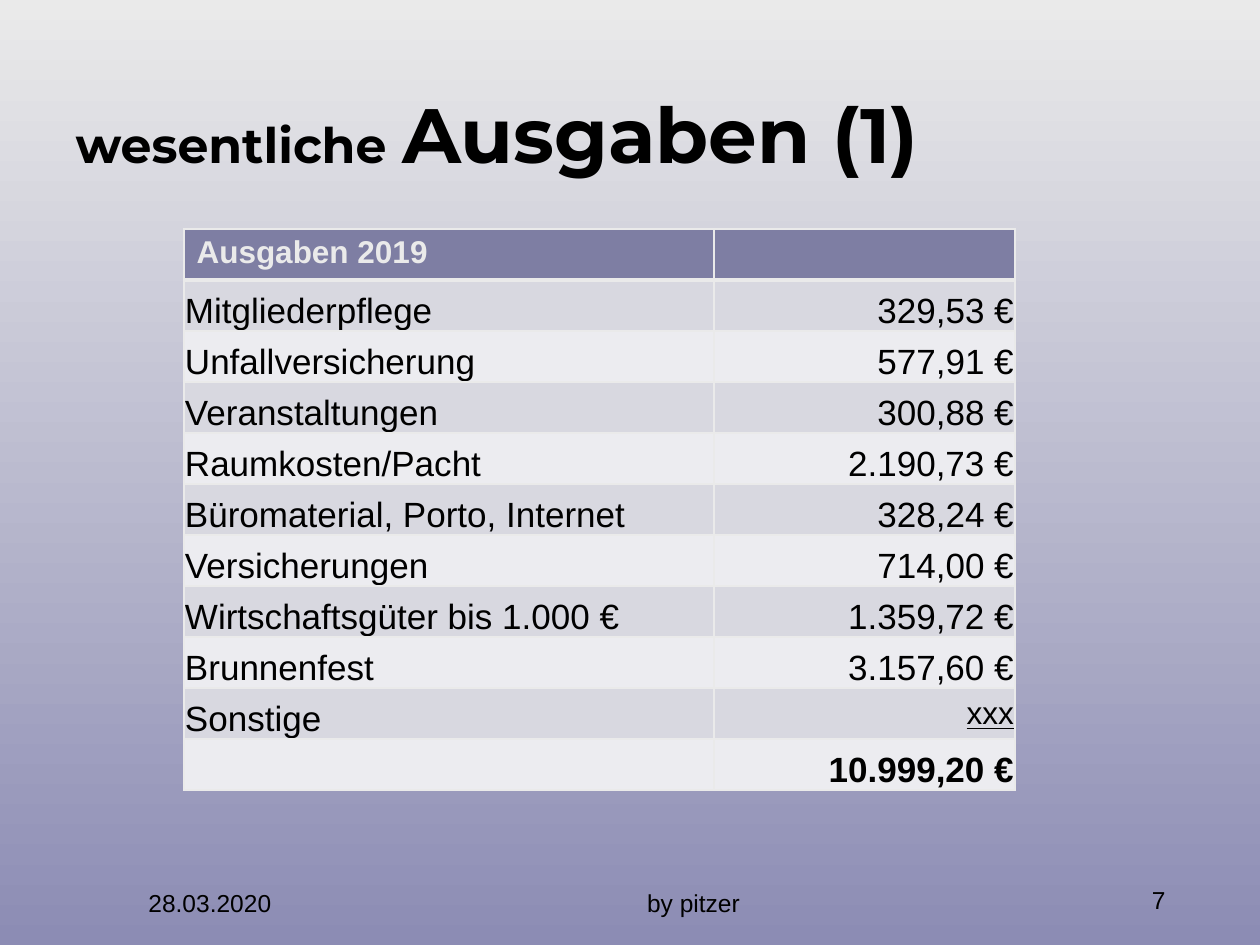
from typing import NamedTuple

import lxml.etree
import pptx
import pptx.dml.color
import pptx.enum.text
import pptx.oxml.ns
import pptx.util

RGBColor = pptx.dml.color.RGBColor
ALIGN = pptx.enum.text.PP_ALIGN
ANCHOR = pptx.enum.text.MSO_ANCHOR
qn = pptx.oxml.ns.qn

BLACK = RGBColor(0x00, 0x00, 0x00)
LIGHT = RGBColor(0xEA, 0xEA, 0xEA)
BG_BOTTOM = RGBColor(0x8C, 0x8C, 0xB4)
HEADER_FILL = RGBColor(0x7E, 0x7E, 0xA3)
BAND_FILLS = (RGBColor(0xD8, 0xD8, 0xE0), RGBColor(0xEC, 0xEC, 0xF0))

PX = 914400 // 126
COL_WIDTHS = (530, 301)
ROW_HEIGHT = 51


class Footer(NamedTuple):
    text: str
    left: int
    top: int
    width: int
    align: ALIGN


class Expense(NamedTuple):
    label: str
    amount: str
    size: int = 20
    anchor: ANCHOR = ANCHOR.BOTTOM
    bold: bool = False
    underline: bool = False


FOOTERS = (
    Footer("28.03.2020", 136, 882, 262, ALIGN.LEFT),
    Footer("by pitzer", 494, 882, 399, ALIGN.CENTER),
    Footer("7", 916, 879, 262, ALIGN.RIGHT),
)

EXPENSES = (
    Expense("Mitgliederpflege", "329,53 €"),
    Expense("Unfallversicherung", "577,91 €"),
    Expense("Veranstaltungen", "300,88 €"),
    Expense("Raumkosten/Pacht", "2.190,73 €"),
    Expense("Büromaterial, Porto, Internet", "328,24 €"),
    Expense("Versicherungen", "714,00 €"),
    Expense("Wirtschaftsgüter bis 1.000 €", "1.359,72 €"),
    Expense("Brunnenfest", "3.157,60 €"),
    Expense("Sonstige", "xxx", size=18, anchor=ANCHOR.MIDDLE, underline=True),
    Expense("", "10.999,20 €", bold=True),
)


def px(n: int) -> pptx.util.Emu:
    return pptx.util.Emu(n * PX)


def add_run(p, text: str, size: int, font: str = "Arial", color: RGBColor = BLACK,
            bold: bool = False, underline: bool = False) -> None:
    r = p.add_run()
    r.text = text
    r.font.name = font
    r.font.size = pptx.util.Pt(size)
    r.font.bold = bold
    r.font.underline = underline
    r.font.color.rgb = color


def set_background(s) -> None:
    fill = s.background.fill
    fill.gradient()
    fill.gradient_angle = 270
    for stop, color, position in zip(fill.gradient_stops, (LIGHT, BG_BOTTOM), (0, 1)):
        stop.color.rgb = color
        stop.position = position


def add_title(s) -> None:
    sp = s.shapes.title
    sp.left, sp.top, sp.width, sp.height = px(63), px(34), px(984), px(198)
    tf = sp.text_frame
    tf.auto_size = pptx.enum.text.MSO_AUTO_SIZE.NONE
    tf.vertical_anchor = ANCHOR.MIDDLE
    p = tf.paragraphs[0]
    p.alignment = ALIGN.LEFT
    for text, size in (("wesentliche", 28), (" ", 32), ("Ausgaben (1)", 44)):
        add_run(p, text, size, font="Montserrat", bold=True)


def add_footer(s, footer: Footer) -> None:
    sp = s.shapes.add_textbox(px(footer.left), px(footer.top), px(footer.width), px(65))
    sp.text_frame.word_wrap = True
    p = sp.text_frame.paragraphs[0]
    p.alignment = footer.align
    add_run(p, footer.text, 14)


def set_borders(cell, top: int = 1, bottom: int = 1) -> None:
    """Draw the four cell borders; widths are in points."""
    tc_pr = cell._tc.get_or_add_tcPr()
    widths = {"a:lnL": 1, "a:lnR": 1, "a:lnT": top, "a:lnB": bottom}
    for i, (tag, width) in enumerate(widths.items()):
        ln = lxml.etree.Element(qn(tag), w=str(pptx.util.Pt(width)))
        fill = lxml.etree.SubElement(ln, qn("a:solidFill"))
        lxml.etree.SubElement(fill, qn("a:srgbClr"), val=str(LIGHT))
        tc_pr.insert(i, ln)


def fill_cell(cell, color: RGBColor) -> None:
    cell.fill.solid()
    cell.fill.fore_color.rgb = color


def format_body_cell(cell, align: ALIGN, anchor: ANCHOR):
    cell.margin_left = cell.margin_right = cell.margin_top = px(1)
    cell.margin_bottom = 0
    cell.vertical_anchor = anchor
    p = cell.text_frame.paragraphs[0]
    p.alignment = align
    return p


def add_expense_table(s) -> None:
    rows = len(EXPENSES) + 1
    frame = s.shapes.add_table(rows, len(COL_WIDTHS), px(184), px(229),
                               px(sum(COL_WIDTHS)), px(rows * ROW_HEIGHT))
    table = frame.table
    table.first_row = table.horz_banding = False
    for column, width in zip(table.columns, COL_WIDTHS):
        column.width = px(width)
    for row in table.rows:
        row.height = px(ROW_HEIGHT)

    for cell in table.rows[0].cells:
        fill_cell(cell, HEADER_FILL)
        set_borders(cell, bottom=3)
    add_run(table.cell(0, 0).text_frame.paragraphs[0], "Ausgaben 2019", 18,
            color=LIGHT, bold=True)

    for i, expense in enumerate(EXPENSES):
        label, amount = table.rows[i + 1].cells
        for cell in (label, amount):
            fill_cell(cell, BAND_FILLS[i % 2])
            set_borders(cell, top=1 if i else 3)
        p = format_body_cell(label, ALIGN.LEFT, ANCHOR.BOTTOM)
        if expense.label:
            add_run(p, expense.label, 20)
        p = format_body_cell(amount, ALIGN.RIGHT, expense.anchor)
        add_run(p, expense.amount, expense.size, bold=expense.bold,
                underline=expense.underline)


def main() -> None:
    prs = pptx.Presentation()
    prs.slide_width, prs.slide_height = pptx.util.Inches(10), pptx.util.Inches(7.5)
    s = prs.slides.add_slide(prs.slide_layouts[5])
    set_background(s)
    for footer in FOOTERS:
        add_footer(s, footer)
    add_title(s)
    add_expense_table(s)
    prs.save("out.pptx")


if __name__ == "__main__":
    main()
